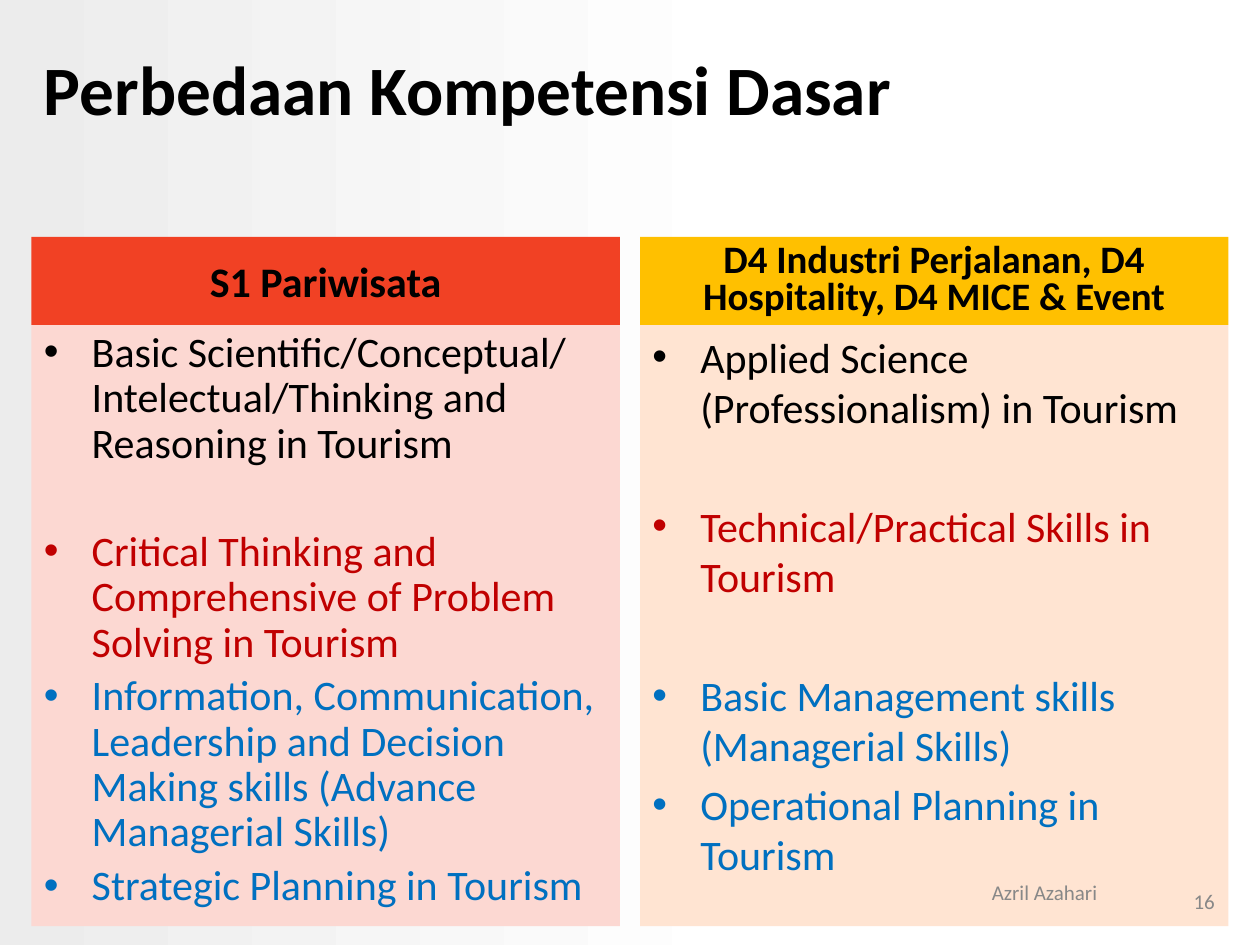
from dataclasses import dataclass

import pptx
import pptx.dml.color
import pptx.enum.shapes
import pptx.enum.text
import pptx.oxml.ns
import pptx.util
from lxml import etree
from pptx.util import Inches

FONT = "Calibri"
BLACK, RED, BLUE, GRAY = "000000", "C00000", "0070C0", "888888"
ALIGN = pptx.enum.text.PP_ALIGN
ANCHOR = pptx.enum.text.MSO_ANCHOR

COLUMN_WIDTH = 4.67
HEADER_TOP, HEADER_HEIGHT = 1.88, 0.7
BODY_TOP, BODY_HEIGHT = HEADER_TOP + HEADER_HEIGHT, 4.77
BULLET_INDENT = 0.38


@dataclass
class Bullet:
    text: str
    color: str
    space_before: float = 4.8


@dataclass
class Column:
    left: float
    header: str
    header_size: float
    header_spacing: float
    header_fill: str
    body_fill: str
    body_spacing: float
    bullets: list[Bullet]


COLUMNS = [
    Column(0.25, "S1 Pariwisata", 24, 1.0, "F14124", "FCD8D2", 0.9, [
        Bullet("Basic Scientific/Conceptual/ Intelectual/Thinking and Reasoning in Tourism", BLACK, 0),
        Bullet("Critical Thinking and Comprehensive of Problem Solving in Tourism", RED, 36),
        Bullet("Information, Communication, Leadership and Decision Making skills "
               "(Advance Managerial Skills)", BLUE),
        Bullet("Strategic Planning in Tourism", BLUE),
    ]),
    Column(5.08, "D4 Industri Perjalanan, D4 Hospitality, D4 MICE & Event", 22.2, 0.8,
           "FFC000", "FFE4D2", 1.0, [
        Bullet("Applied Science (Professionalism) in Tourism", BLACK, 0),
        Bullet("Technical/Practical Skills in Tourism", RED, 39),
        Bullet("Basic Management skills (Managerial Skills)", BLUE, 39),
        Bullet("Operational Planning in Tourism", BLUE),
    ]),
]


def rgb(color: str) -> pptx.dml.color.RGBColor:
    return pptx.dml.color.RGBColor.from_string(color)


def format_runs(paragraph, size: float, color: str, bold: bool = False) -> None:
    for run in paragraph.runs:
        run.font.name = FONT
        run.font.size = pptx.util.Pt(size)
        run.font.bold = bold
        run.font.color.rgb = rgb(color)


def add_bullet_mark(paragraph, color: str) -> None:
    properties = paragraph._p.get_or_add_pPr()
    properties.set("marL", str(Inches(BULLET_INDENT)))
    properties.set("indent", str(-Inches(BULLET_INDENT)))
    qualified = pptx.oxml.ns.qn
    bullet_color = etree.SubElement(properties, qualified("a:buClr"))
    etree.SubElement(bullet_color, qualified("a:srgbClr"), val=color)
    etree.SubElement(properties, qualified("a:buFont"), typeface="Arial")
    etree.SubElement(properties, qualified("a:buChar"), char="•")


def add_label(slide, left: float, top: float, width: float, height: float, text: str,
              size: float, color: str, alignment, bold: bool = False) -> None:
    shape = slide.shapes.add_textbox(Inches(left), Inches(top), Inches(width), Inches(height))
    text_frame = shape.text_frame
    text_frame.word_wrap = True
    text_frame.vertical_anchor = ANCHOR.MIDDLE
    text_frame.text = text
    paragraph = text_frame.paragraphs[0]
    paragraph.alignment = alignment
    format_runs(paragraph, size, color, bold)


def add_panel(slide, left: float, top: float, height: float, fill: str, anchor):
    shape = slide.shapes.add_shape(pptx.enum.shapes.MSO_SHAPE.RECTANGLE, Inches(left),
                                   Inches(top), Inches(COLUMN_WIDTH), Inches(height))
    shape.shadow.inherit = False
    shape.fill.solid()
    shape.fill.fore_color.rgb = rgb(fill)
    shape.line.fill.background()
    shape.text_frame.word_wrap = True
    shape.text_frame.vertical_anchor = anchor
    return shape.text_frame


def add_column(slide, column: Column) -> None:
    # Coloured header
    header = add_panel(slide, column.left, HEADER_TOP, HEADER_HEIGHT,
                       column.header_fill, ANCHOR.MIDDLE)
    header.text = column.header
    paragraph = header.paragraphs[0]
    paragraph.alignment = ALIGN.CENTER
    paragraph.line_spacing = column.header_spacing
    format_runs(paragraph, column.header_size, BLACK, bold=True)

    # Bulleted body
    body = add_panel(slide, column.left, BODY_TOP, BODY_HEIGHT, column.body_fill, ANCHOR.TOP)
    body.text = "\n".join(bullet.text for bullet in column.bullets)
    for paragraph, bullet in zip(body.paragraphs, column.bullets):
        add_bullet_mark(paragraph, bullet.color)
        paragraph.alignment = ALIGN.LEFT
        paragraph.line_spacing = column.body_spacing
        paragraph.space_before = pptx.util.Pt(bullet.space_before)
        format_runs(paragraph, 24, bullet.color)


def set_background(slide) -> None:
    fill = slide.background.fill
    fill.gradient()
    fill.gradient_angle = 0
    for stop, (position, color) in zip(fill.gradient_stops, [(0, "ECECEC"), (0.6, "FFFFFF")]):
        stop.position = position
        stop.color.rgb = rgb(color)


def main() -> None:
    presentation = pptx.Presentation()
    presentation.slide_width = Inches(10)
    presentation.slide_height = Inches(7.5)
    slide = presentation.slides.add_slide(presentation.slide_layouts[6])
    set_background(slide)

    # Title
    add_label(slide, 0.25, 0.07, 7.67, 1.25, "Perbedaan Kompetensi Dasar", 39.6, BLACK,
              ALIGN.LEFT, bold=True)

    # Comparison columns
    for column in COLUMNS:
        add_column(slide, column)

    # Slide number and footer
    add_label(slide, 7.41, 6.95, 2.33, 0.4, "16", 12, GRAY, ALIGN.RIGHT)
    add_label(slide, 6.83, 6.83, 2.92, 0.5, "Azril Azahari", 12, GRAY, ALIGN.CENTER)

    presentation.save("out.pptx")


if __name__ == "__main__":
    main()
